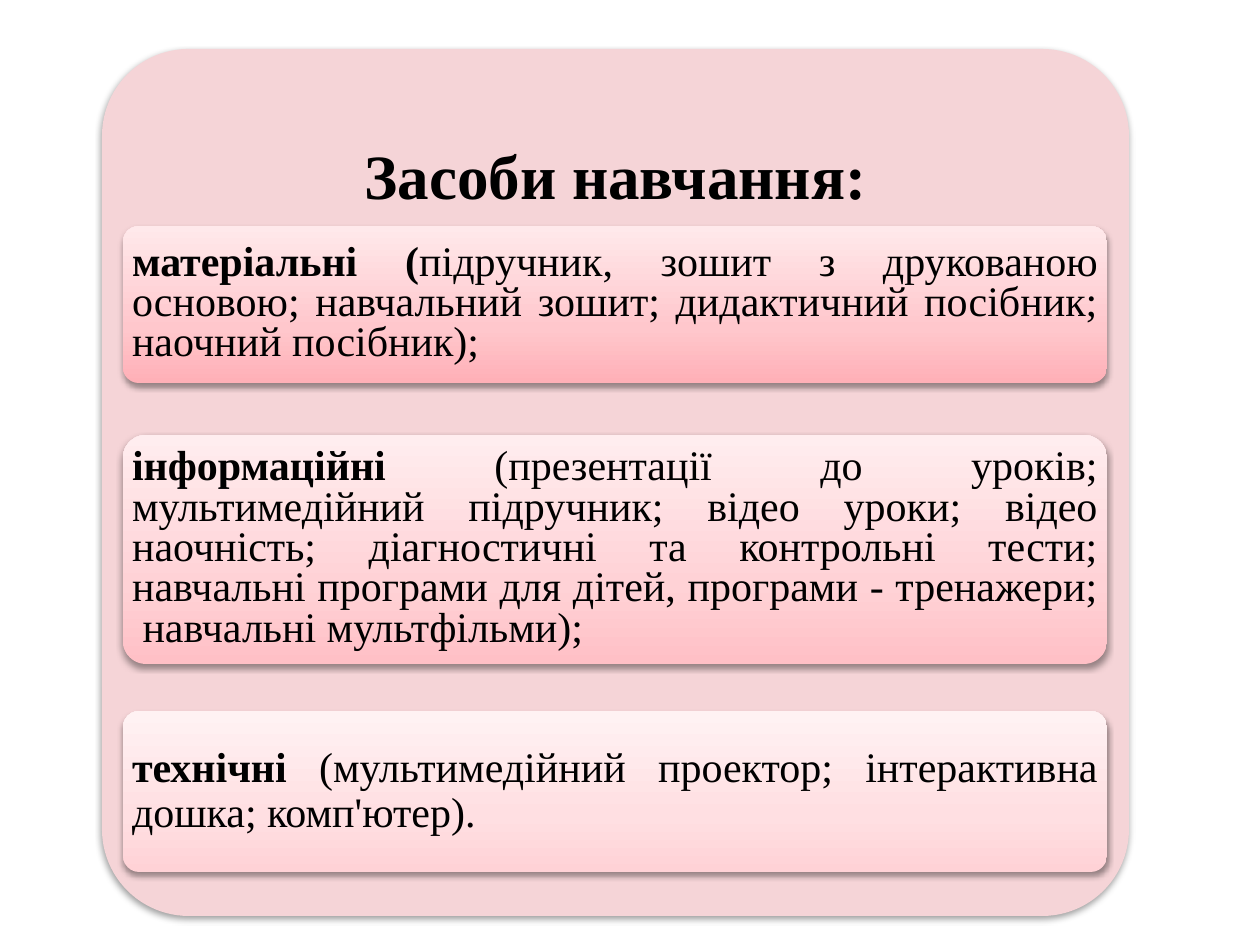
from copy import deepcopy

from lxml import etree
from pptx import Presentation
from pptx.dml.color import RGBColor
from pptx.enum.shapes import MSO_SHAPE
from pptx.enum.text import MSO_ANCHOR, PP_ALIGN
from pptx.oxml import parse_xml
from pptx.util import Pt

ROUND = MSO_SHAPE.ROUNDED_RECTANGLE
MIDDLE = MSO_ANCHOR.MIDDLE
CENTER = PP_ALIGN.CENTER
JUSTIFY = PP_ALIGN.JUSTIFY
SCALE = 914400 / 126
NS = "http://schemas.openxmlformats.org/drawingml/2006/main"
FONT = "Times New Roman"
CURVE = 0.1
CORNER = 0.29
STOPS = (0, 0.35, 1)
COLORS = {
    "text": "000000",
    "panel": "F5D4D7",
    "rose": ("FFB0B7", "FFC7CC", "FFE9EB"),
    "pink": ("FFC0C6", "FFD2D6", "FFEDEF"),
    "blush": ("FFD2D6", "FFDFE2", "FFF2F3"),
}
LEFT, WIDTH = 123, 984
CARDS = [
    (226, 157, "rose", 0.8, "матеріальні (",
     "підручник, зошит з друкованою основою; навчальний зошит; "
     "дидактичний посібник; наочний посібник);"),
    (435, 229, "pink", 0.8, "інформаційні",
     " (презентації до уроків; мультимедійний підручник; відео уроки; "
     "відео наочність; діагностичні та контрольні тести; навчальні програми "
     "для дітей, програми - тренажери;  навчальні мультфільми);"),
    (711, 161, "blush", 0.9, "технічні",
     " (мультимедійний проектор; інтерактивна дошка; комп'ютер)."),
]


def px(value):
    return round(value * SCALE)


def rgb(code):
    return RGBColor.from_string(code)


def write(shape, runs, size=24, align=JUSTIFY, line=0.8, pad=(9, 6)):
    frame = shape.text_frame
    frame.word_wrap = True
    frame.vertical_anchor = MIDDLE
    frame.margin_left = frame.margin_right = px(pad[0])
    frame.margin_top = frame.margin_bottom = px(pad[1])
    para = frame.paragraphs[0]
    para.alignment = align
    para.line_spacing = line
    for text, bold in runs:
        run = para.add_run()
        run.text = text
        font = run.font
        font.name = FONT
        font.size = Pt(size)
        font.bold = bold
        font.color.rgb = rgb(COLORS["text"])


def shade(shape):
    shape.shadow.inherit = False
    effects = shape._element.spPr.find(f"{{{NS}}}effectLst")
    shadow = etree.SubElement(
        effects, f"{{{NS}}}outerShdw", blurRad=str(Pt(3.5)),
        dist=str(Pt(2)), dir="5400000", rotWithShape="0")
    shadow.append(parse_xml(
        f'<a:srgbClr xmlns:a="{NS}" val="000000"><a:alpha val="38000"/></a:srgbClr>'))


def blend(shape, codes):
    fill = shape.fill
    fill.gradient()
    fill.gradient_angle = 90
    first = shape._element.spPr.find(f".//{{{NS}}}gs")
    first.addnext(deepcopy(first))
    for stop, place, code in zip(fill.gradient_stops, STOPS, codes):
        stop.position = place
        stop.color.rgb = rgb(code)


def box(slide, left, top, width, height):
    shape = slide.shapes.add_shape(ROUND, px(left), px(top), px(width), px(height))
    shape.adjustments[0] = CURVE
    shape.line.fill.background()
    shade(shape)
    return shape


def head(slide, text):
    title = slide.shapes.title
    title.left, title.top = px(102), px(49)
    title.width, title.height = px(1027), px(260)
    write(title, [(text, True)], size=36, align=CENTER, line=0.9, pad=(19, 19))
    slide.shapes._spTree.append(title._element)


def card(slide, top, height, tone, line, term, rest):
    shape = box(slide, LEFT, top, WIDTH, height)
    blend(shape, COLORS[tone])
    inset = CORNER * CURVE * height
    write(shape, [(term, True), (rest, False)], line=line, pad=(9 - inset, 0))


def main():
    deck = Presentation()
    deck.slide_width, deck.slide_height = px(1260), px(945)
    slide = deck.slides.add_slide(deck.slide_layouts[5])
    panel = box(slide, 102, 49, 1027, 867)
    panel.fill.solid()
    panel.fill.fore_color.rgb = rgb(COLORS["panel"])
    head(slide, "Засоби навчання:")
    for item in CARDS:
        card(slide, *item)
    deck.save("out.pptx")


if __name__ == "__main__":
    main()
